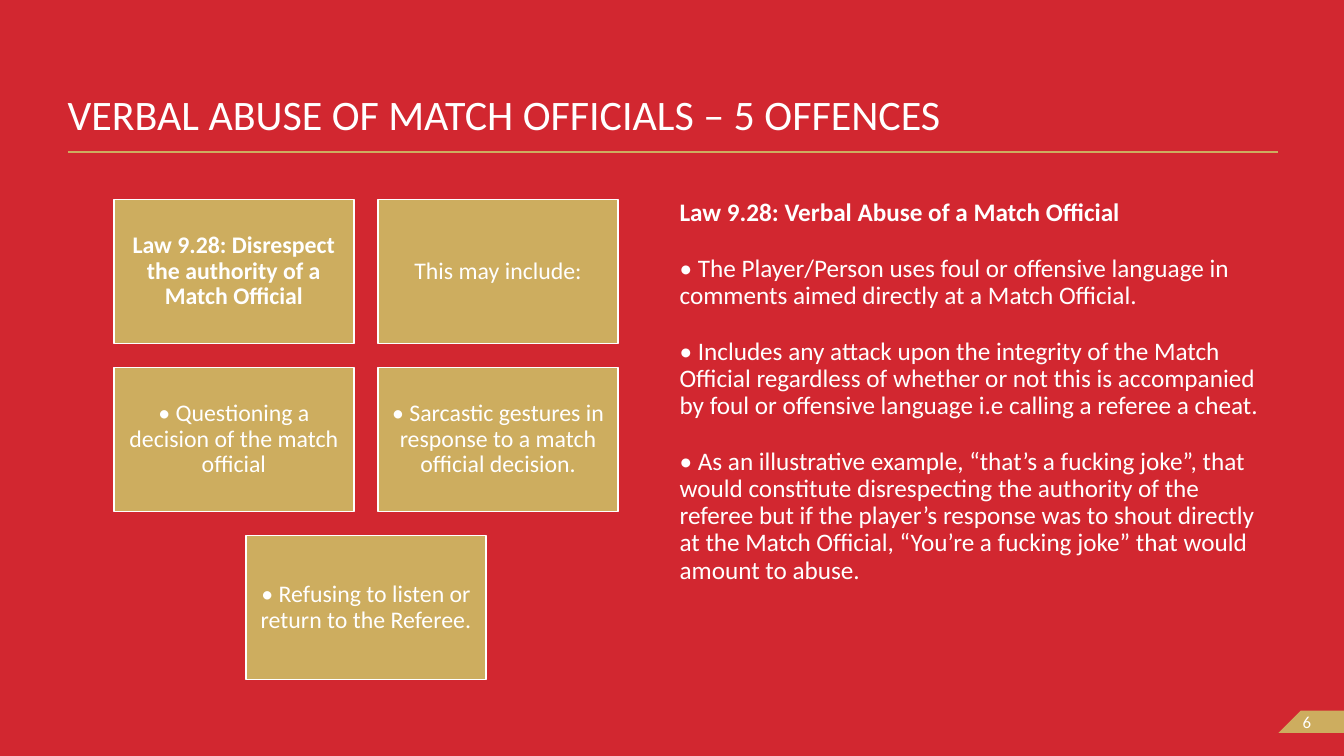
from lxml import etree
from pptx import Presentation
from pptx.dml.color import RGBColor
from pptx.enum.shapes import MSO_CONNECTOR, MSO_SHAPE
from pptx.enum.text import MSO_ANCHOR as Anchor, MSO_AUTO_SIZE, PP_ALIGN as Align
from pptx.oxml.ns import qn
from pptx.util import Inches, Pt

COLORS = {"red": "D22730", "gold": "CDAD5F", "white": "FFFFFF"}
FONT = "Calibri"
WIDTH, HEIGHT = 13.33, 7.5
MARGIN, RIGHT = 0.67, 12.68

TITLE = "VERBAL ABUSE OF MATCH OFFICIALS – 5 OFFENCES"
CARDS = [
    "Law 9.28: Disrespect the authority of a Match Official",
    "This may include:",
    "• Questioning a decision of the match official",
    "• Sarcastic gestures in response to a match official decision.",
    "• Refusing to listen or return to the Referee.",
]
BODY = [
    "Law 9.28: Verbal Abuse of a Match Official",
    "• The Player/Person uses foul or offensive language in comments aimed "
    "directly at a Match Official.",
    "• Includes any attack upon the integrity of the Match Official regardless "
    "of whether or not this is accompanied by foul or offensive language i.e "
    "calling a referee a cheat.",
    "• As an illustrative example, “that’s a fucking joke”, that would "
    "constitute disrespecting the authority of the referee but if the player’s "
    "response was to shout directly at the Match Official, “You’re a fucking "
    "joke” that would amount to abuse.",
]


def rgb(name):
    return RGBColor.from_string(COLORS[name])


def place(sp, box):
    sp.left, sp.top, sp.width, sp.height = map(Inches, box)


def write(sp, paragraphs, size=18, bold_first=False, align=Align.LEFT,
          anchor=Anchor.TOP, insets=(0, 0, 0, 0), spacing=0.9, after=0):
    """Fill a shape with formatted paragraphs."""
    tf = sp.text_frame
    tf.word_wrap = True
    tf.auto_size = MSO_AUTO_SIZE.NONE
    tf.vertical_anchor = anchor
    tf.margin_left, tf.margin_top, tf.margin_right, tf.margin_bottom = map(Inches, insets)
    for i, text in enumerate(paragraphs):
        p = tf.paragraphs[0] if i == 0 else tf.add_paragraph()
        p.alignment = align
        p.line_spacing = spacing
        p.space_before, p.space_after = Pt(0), Pt(after)
        r = p.add_run()
        r.text = text
        r.font.name, r.font.size = FONT, Pt(size)
        r.font.bold = bold_first and i == 0
        r.font.color.rgb = rgb("white")


def paint(sp, line=None):
    sp.shadow.inherit = False
    sp.fill.solid()
    sp.fill.fore_color.rgb = rgb("gold")
    if line:
        sp.line.color.rgb = rgb(line)
        sp.line.width = Pt(1)
    else:
        sp.line.fill.background()


def add_title(s, box):
    sp = s.shapes.title
    place(sp, box)
    write(sp, [TITLE], size=30, anchor=Anchor.BOTTOM, spacing=0.8)
    # Rule under the title
    y = Inches(box[1] + box[3] + 0.14)
    rule = s.shapes.add_connector(MSO_CONNECTOR.STRAIGHT, Inches(MARGIN), y, Inches(RIGHT), y)
    rule.line.color.rgb = rgb("gold")
    rule.line.width = Pt(1)
    etree.SubElement(rule._element.spPr, qn("a:effectLst"))


def add_cards(s, box, columns=2, gap=0.24):
    """Lay cards out in rows, centring an incomplete last row."""
    left, top, width, height = box
    rows = -(-len(CARDS) // columns)
    w = (width - gap * (columns - 1)) / columns
    h = (height - gap * (rows - 1)) / rows
    for i, text in enumerate(CARDS):
        row, col = divmod(i, columns)
        missing = columns - min(columns, len(CARDS) - row * columns)
        x = left + (col + missing / 2) * (w + gap)
        y = top + row * (h + gap)
        sp = s.shapes.add_shape(MSO_SHAPE.RECTANGLE, *map(Inches, (x, y, w, h)))
        paint(sp, line="white")
        write(sp, [text], size=17, bold_first=i == 0, align=Align.CENTER,
              anchor=Anchor.MIDDLE, insets=(0.07,) * 4)


def add_body(s, box):
    sp = s.placeholders[1]
    place(sp, box)
    write(sp, BODY, bold_first=True, after=20.4)
    # Bullets are typed in the text, so list formatting is off
    for p in sp.text_frame.paragraphs:
        pPr = p._p.get_or_add_pPr()
        pPr.set("marL", "0")
        pPr.set("indent", "0")
        etree.SubElement(pPr, qn("a:buNone"))


def add_page_number(s, box):
    x, y, w, h = box
    outline = s.shapes.build_freeform(Inches(x + h), Inches(y))
    corners = [(x + w, y), (x + w, y + h), (x, y + h)]
    outline.add_line_segments([(Inches(a), Inches(b)) for a, b in corners], close=True)
    sp = outline.convert_to_shape()
    paint(sp)
    write(sp, ["6"], size=12, anchor=Anchor.MIDDLE, insets=(0.24, 0, 0, 0), spacing=1.0)


def main():
    prs = Presentation()
    prs.slide_width, prs.slide_height = Inches(WIDTH), Inches(HEIGHT)
    s = prs.slides.add_slide(prs.slide_layouts[1])
    s.background.fill.solid()
    s.background.fill.fore_color.rgb = rgb("red")

    content_top, content_height = 1.98, 4.76
    add_title(s, (MARGIN, 0.5, 10.65, 0.87))
    add_cards(s, (1.13, content_top, 5, content_height))
    add_body(s, (6.74, content_top, 5.92, content_height))
    add_page_number(s, (RIGHT, 7.05, WIDTH - RIGHT, 0.22))
    prs.save("out.pptx")


if __name__ == "__main__":
    main()
